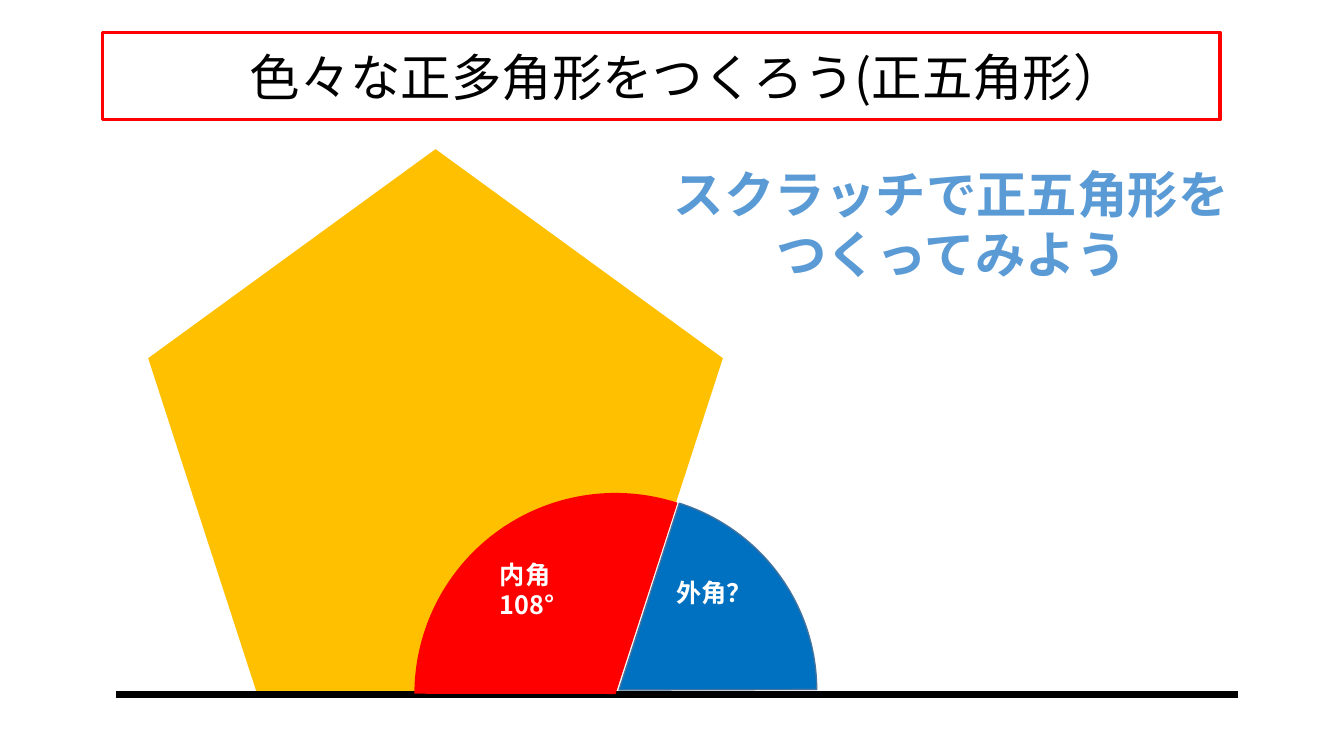
from lxml.etree import SubElement
from pptx import Presentation
from pptx.dml.color import RGBColor
from pptx.enum.shapes import MSO_CONNECTOR as Connector, MSO_SHAPE as Shape
from pptx.enum.text import MSO_ANCHOR as Anchor, PP_ALIGN as Align
from pptx.oxml.ns import qn
from pptx.util import Pt

PX = 9144
FONT = "Noto Sans CJK JP"
COLORS = {
    "black": "000000", "white": "FFFFFF", "heading": "5B9BD5",
    "pentagon": "FFC000", "red": "FF0000", "blue": "0070C0", "edge": "43739E",
}


def color(name):
    """Return the named colour."""
    return RGBColor.from_string(COLORS[name])


def emu(*lengths):
    """Turn px lengths into EMU."""
    return [length * PX for length in lengths]


def set_all(target, values):
    """Set every attribute in a dict of format values."""
    for name, value in values.items():
        setattr(target, name, value)


def write(box, lines, size, tint, bold=False, align=Align.LEFT, leading=None, **frame_format):
    """Write one paragraph per line into a box."""
    frame = box.text_frame
    set_all(frame, {"word_wrap": True, **frame_format})
    for index, line in enumerate(lines):
        para = frame.add_paragraph() if index else frame.paragraphs[0]
        set_all(para, {"alignment": align, "line_spacing": leading})
        span = para.add_run()
        span.text = line
        set_all(span.font, {"size": Pt(size), "bold": bold, "name": FONT})
        span.font.color.rgb = color(tint)
        east_asian = SubElement(span.font._element, qn("a:ea"))
        east_asian.set("typeface", FONT)


def add_title(slide, bounds, text):
    """Place the framed title."""
    title = slide.shapes.title
    set_all(title, dict(zip(("left", "top", "width", "height"), emu(*bounds))))
    title.line.color.rgb = color("red")
    title.line.width = Pt(2.25)
    write(title, [text], 36, "black", align=Align.CENTER,
          vertical_anchor=Anchor.MIDDLE, margin_left=60 * PX)


def add_figure(slide, kind, bounds, fill, edge=None, angles=()):
    """Add a filled preset shape, with its adjustments and edge."""
    figure = slide.shapes.add_shape(kind, *emu(*bounds))
    figure.shadow.inherit = False
    figure.fill.solid()
    figure.fill.fore_color.rgb = color(fill)
    for index, angle in enumerate(angles):
        figure.adjustments[index] = angle * 0.6
    if edge:
        figure.line.color.rgb = color(edge)
        figure.line.width = Pt(1)
    else:
        figure.line.fill.background()


def add_baseline(slide, start, end):
    """Add the thick ground line."""
    line = slide.shapes.add_connector(Connector.STRAIGHT, *emu(*start, *end))
    line.line.color.rgb = color("black")
    line.line.width = Pt(4.5)
    SubElement(line._element.spPr, qn("a:effectLst"))


def add_text(slide, bounds, lines, size, tint, **text_format):
    """Add a bold text box."""
    box = slide.shapes.add_textbox(*emu(*bounds))
    write(box, lines, size, tint, bold=True, **text_format)


def main():
    """Build the pentagon slide."""
    deck = Presentation()
    set_all(deck, {"slide_width": 1333 * PX, "slide_height": 750 * PX})
    slide = deck.slides.add_slide(deck.slide_layouts[5])
    add_title(slide, (102, 32, 1108, 87), "色々な正多角形をつくろう(正五角形）")
    add_figure(slide, Shape.REGULAR_PENTAGON, (147, 148, 570, 543), "pentagon")
    add_baseline(slide, (115, 689), (1228, 689))
    add_figure(slide, Shape.PIE, (411, 489, 399, 399), "red", angles=(180.08, 287.93))
    add_text(slide, (486, 549, 167, 110), ["内角", "108°"], 18, "white", leading=Pt(22))
    add_figure(slide, Shape.PIE, (418, 490, 392, 389), "blue", "edge", (287.88, 359.82))
    add_text(slide, (661, 567, 117, 101), ["外角？"], 18, "white", leading=Pt(22))
    add_text(slide, (615, 162, 657, 120), ["スクラッチで正五角形を", "つくってみよう"], 36,
             "heading", align=Align.CENTER, leading=Pt(43), vertical_anchor=Anchor.MIDDLE)
    deck.save("out.pptx")


if __name__ == "__main__":
    main()
